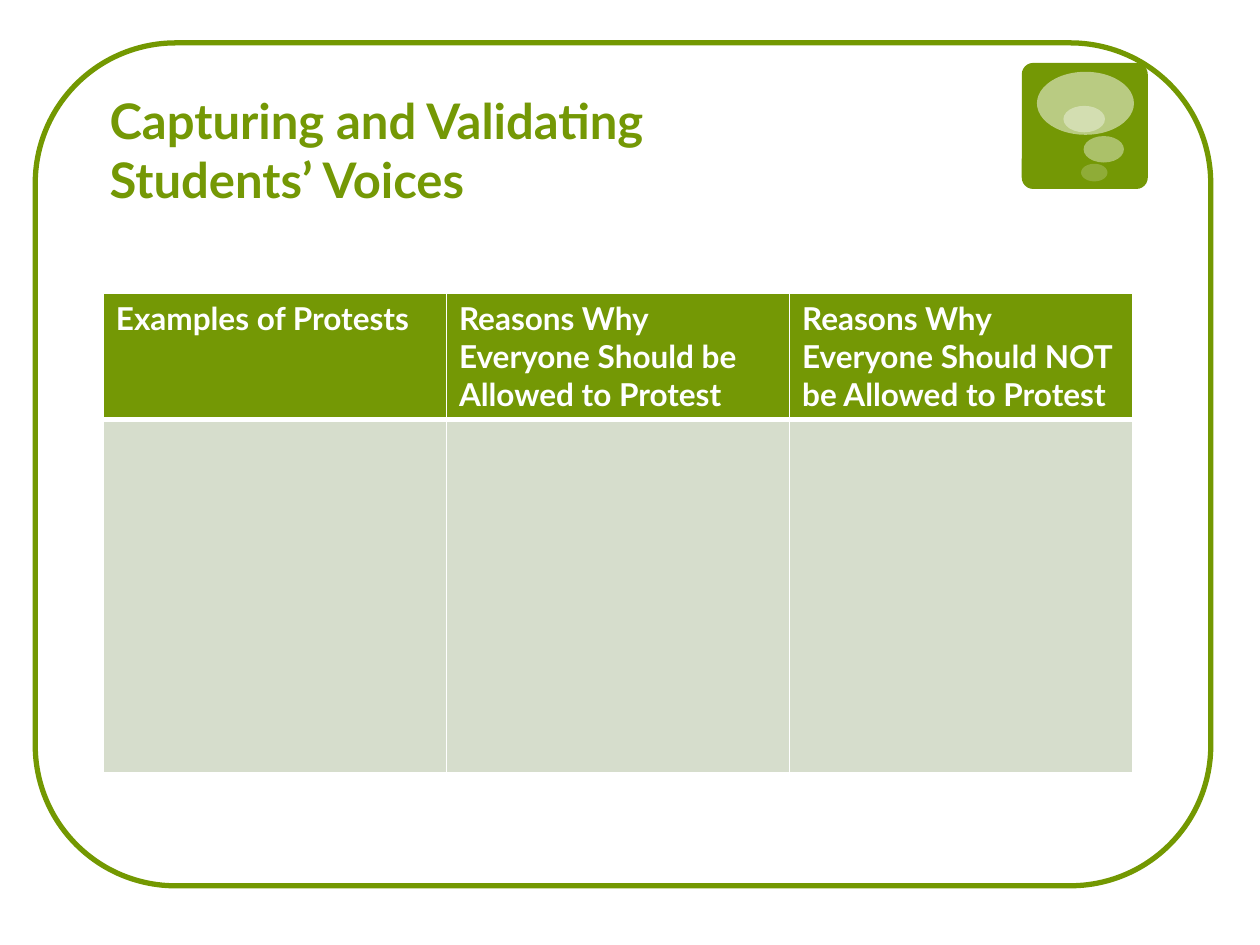
"""Build the slide on capturing and validating students' voices."""
from lxml.etree import SubElement as Sub
from pptx import Presentation
from pptx.dml.color import RGBColor
from pptx.enum.shapes import MSO_SHAPE as Kind
from pptx.enum.text import MSO_ANCHOR as Anchor
from pptx.oxml import parse_xml
from pptx.oxml.ns import nsdecls, qn
from pptx.util import Inches, Pt

GREEN = RGBColor(0x74, 0x98, 0x05)
EDGE = RGBColor(0x73, 0x98, 0x01)
PALE = RGBColor(0xD6, 0xDD, 0xCC)
WHITE = RGBColor(0xFF, 0xFF, 0xFF)

TITLE = "Capturing and Validating Students’ Voices"
HEADS = [
    "Examples of Protests",
    "Reasons Why Everyone Should be Allowed to Protest",
    "Reasons Why Everyone Should NOT be Allowed to Protest",
]
ROWS = [(0.99, GREEN, HEADS), (2.8, PALE, [""] * len(HEADS))]
RULES = [{"L": 1, "R": 1, "T": 1, "B": 3}, {"L": 1, "R": 1, "T": 3, "B": 1}]
BADGE = (8.11, 0.5, 1, 1)
BUBBLES = [
    ((8.23, 0.57, 0.77, 0.5), 50),
    ((8.6, 1.08, 0.32, 0.21), 40),
    ((8.58, 1.3, 0.21, 0.14), 20),
    ((8.44, 0.84, 0.33, 0.21), 38),
]
FRAME = (0.28, 0.34, 9.33, 6.69)
HEADING = (0.82, 0.73, 5.91, 0.97)
GRID = (0.82, 2.33, 8.17, sum(row[0] for row in ROWS))


def place(box):
    return [Inches(n) for n in box]


def apply(item, form):
    for name, value in form.items():
        setattr(item, name, value)


def shape(slide, kind, box, fill=None, alpha=100):
    item = slide.shapes.add_shape(kind, *place(box))
    item.shadow.inherit = False
    item.line.fill.background()
    if fill is None:
        item.fill.background()
    else:
        item.fill.solid()
        item.fill.fore_color.rgb = fill
    if alpha < 100:
        tint = item.fill._xPr.find(".//" + qn("a:srgbClr"))
        Sub(tint, qn("a:alpha"), val=str(alpha * 1000))
    return item


def write(frame, text, size, color):
    part = frame.paragraphs[0].add_run()
    part.text = text
    apply(part.font, {"name": "Lato", "size": Pt(size), "bold": True})
    part.font.color.rgb = color


def border(cell, rules):
    props = cell._tc.get_or_add_tcPr()
    for spot, (side, width) in enumerate(rules.items()):
        props.insert(spot, parse_xml(
            f'<a:ln{side} {nsdecls("a")} w="{Pt(width)}"><a:solidFill>'
            f'<a:srgbClr val="{WHITE}"/></a:solidFill></a:ln{side}>'))


def table(slide):
    grid = slide.shapes.add_table(len(ROWS), len(HEADS), *place(GRID)).table
    for col in grid.columns:
        col.width = Inches(GRID[2] / len(HEADS))
    for r, (height, fill, texts) in enumerate(ROWS):
        grid.rows[r].height = Inches(height)
        for c, text in enumerate(texts):
            cell = grid.cell(r, c)
            cell.fill.solid()
            cell.fill.fore_color.rgb = fill
            border(cell, RULES[r])
            if text:
                write(cell.text_frame, text, 18, WHITE)


def main():
    deck = Presentation()
    apply(deck, {"slide_width": Inches(10), "slide_height": Inches(7.5)})
    slide = deck.slides.add_slide(deck.slide_layouts[6])

    badge = shape(slide, Kind.ROUNDED_RECTANGLE, BADGE, GREEN)
    badge.adjustments[0] = 0.09
    for box, alpha in BUBBLES:
        shape(slide, Kind.OVAL, box, WHITE, alpha)

    frame = slide.shapes.add_textbox(*place(HEADING)).text_frame
    apply(frame, {
        "word_wrap": True, "vertical_anchor": Anchor.BOTTOM,
        "margin_left": Inches(0.05), "margin_right": Inches(0.1),
        "margin_top": Inches(0.05), "margin_bottom": Inches(0.05),
    })
    write(frame, TITLE, 28, GREEN)

    table(slide)
    edge = shape(slide, Kind.ROUNDED_RECTANGLE, FRAME)
    edge.line.color.rgb = EDGE
    edge.line.width = Pt(3)
    deck.save("out.pptx")


if __name__ == "__main__":
    main()
